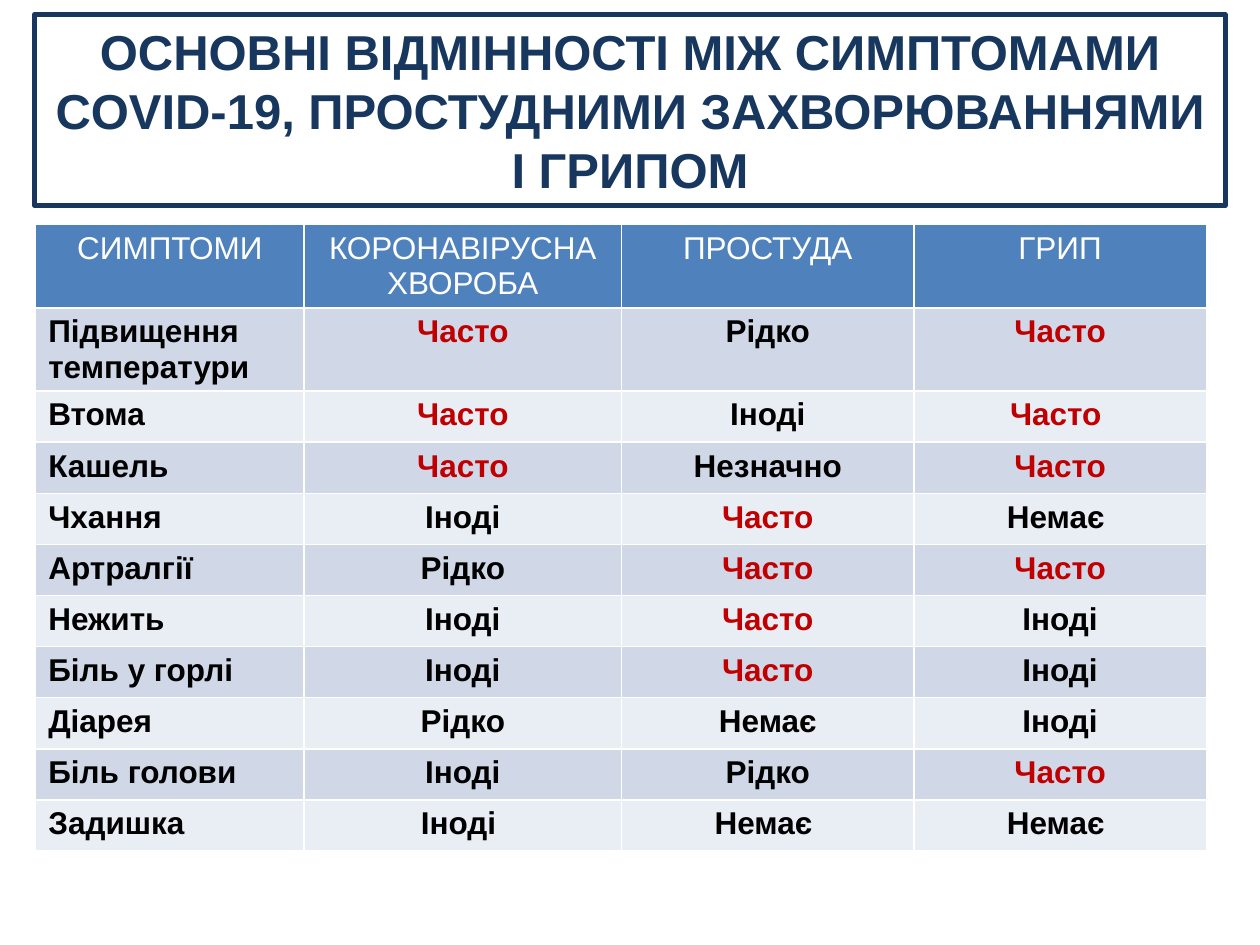
import lxml.etree
import pptx
import pptx.dml.color
import pptx.enum.shapes
import pptx.enum.text
import pptx.oxml.ns
import pptx.util

Cm = pptx.util.Cm
Pt = pptx.util.Pt
RGBColor = pptx.dml.color.RGBColor
CENTER = pptx.enum.text.PP_ALIGN.CENTER
LEFT = pptx.enum.text.PP_ALIGN.LEFT

NAVY = RGBColor(0x17, 0x37, 0x5E)
BLUE = RGBColor(0x4F, 0x81, 0xBD)
BAND_DARK = RGBColor(0xD0, 0xD8, 0xE8)
BAND_LIGHT = RGBColor(0xE9, 0xED, 0xF4)
RED = RGBColor(0xC0, 0x00, 0x00)
BLACK = RGBColor(0x00, 0x00, 0x00)
WHITE = RGBColor(0xFF, 0xFF, 0xFF)

TITLE = ("ОСНОВНІ ВІДМІННОСТІ МІЖ СИМПТОМАМИ COVID-19, "
         "ПРОСТУДНИМИ ЗАХВОРЮВАННЯМИ І ГРИПОМ")
SYMPTOMS = [
    ("СИМПТОМИ", "КОРОНАВІРУСНА ХВОРОБА", "ПРОСТУДА", "ГРИП"),
    ("Підвищення температури", "Часто", "Рідко", "Часто"),
    ("Втома", "Часто", "Іноді", "Часто "),
    ("Кашель", "Часто", "Незначно", "Часто"),
    ("Чхання", "Іноді", "Часто", "Немає "),
    ("Артралгії", "Рідко", "Часто", "Часто"),
    ("Нежить", "Іноді", "Часто", "Іноді"),
    ("Біль у горлі", "Іноді", "Часто", "Іноді"),
    ("Діарея", "Рідко", "Немає", "Іноді"),
    ("Біль голови", "Іноді", "Рідко", "Часто"),
    ("Задишка", "Іноді ", "Немає ", "Немає "),
]
COLUMN_SHARES = (2.13, 2.52, 2.32, 2.32)


def add_run(p, text, size, color, bold, align):
    p.alignment = align
    r = p.add_run()
    r.text = text
    r.font.name = "Arial"
    r.font.size = Pt(size)
    r.font.bold = bold
    r.font.color.rgb = color


def add_title(slide, left, top, width, height):
    sp = slide.shapes.add_shape(
        pptx.enum.shapes.MSO_SHAPE.RECTANGLE, left, top, width, height)
    sp.shadow.inherit = False
    sp.fill.background()
    sp.line.color.rgb = NAVY
    sp.line.width = Pt(3)
    ln = sp.line._get_or_add_ln()
    lxml.etree.SubElement(ln, pptx.oxml.ns.qn("a:round"))
    tf = sp.text_frame
    tf.word_wrap = True
    add_run(tf.paragraphs[0], TITLE, 28, NAVY, True, CENTER)


def set_borders(cell, color, widths):
    """Draw cell borders; widths maps the sides L, R, T, B to points."""
    tc_pr = cell._tc.get_or_add_tcPr()
    for side, width in widths.items():
        ln = lxml.etree.SubElement(
            tc_pr, pptx.oxml.ns.qn(f"a:ln{side}"), w=str(Pt(width)))
        fill = lxml.etree.SubElement(ln, pptx.oxml.ns.qn("a:solidFill"))
        lxml.etree.SubElement(
            fill, pptx.oxml.ns.qn("a:srgbClr"), val=str(color))


def add_symptom_table(slide, left, top, width, row_height):
    table = slide.shapes.add_table(
        len(SYMPTOMS), len(COLUMN_SHARES), left, top, width,
        row_height * len(SYMPTOMS)).table
    for column, share in zip(table.columns, COLUMN_SHARES):
        column.width = int(width * share / sum(COLUMN_SHARES))

    for i, row in enumerate(SYMPTOMS):
        header = i == 0
        band = BLUE if header else BAND_DARK if i % 2 else BAND_LIGHT
        for j, text in enumerate(row):
            cell = table.cell(i, j)
            set_borders(cell, WHITE, {"L": 1, "R": 1, "T": 1, "B": 1})
            cell.fill.solid()
            cell.fill.fore_color.rgb = band
            often = text.strip() == "Часто"
            color = WHITE if header else RED if often else BLACK
            align = CENTER if header or j else LEFT
            add_run(cell.text_frame.paragraphs[0], text, 18, color,
                    not header, align)


def main():
    prs = pptx.Presentation()
    prs.slide_width = Cm(25.4)
    prs.slide_height = Cm(19.05)
    slide = prs.slides.add_slide(prs.slide_layouts[6])
    add_symptom_table(slide, Cm(0.72), Cm(4.53), Cm(23.6), Cm(1.03))
    add_title(slide, Cm(0.7), Cm(0.3), Cm(24), Cm(3.84))
    prs.save("out.pptx")


if __name__ == "__main__":
    main()
